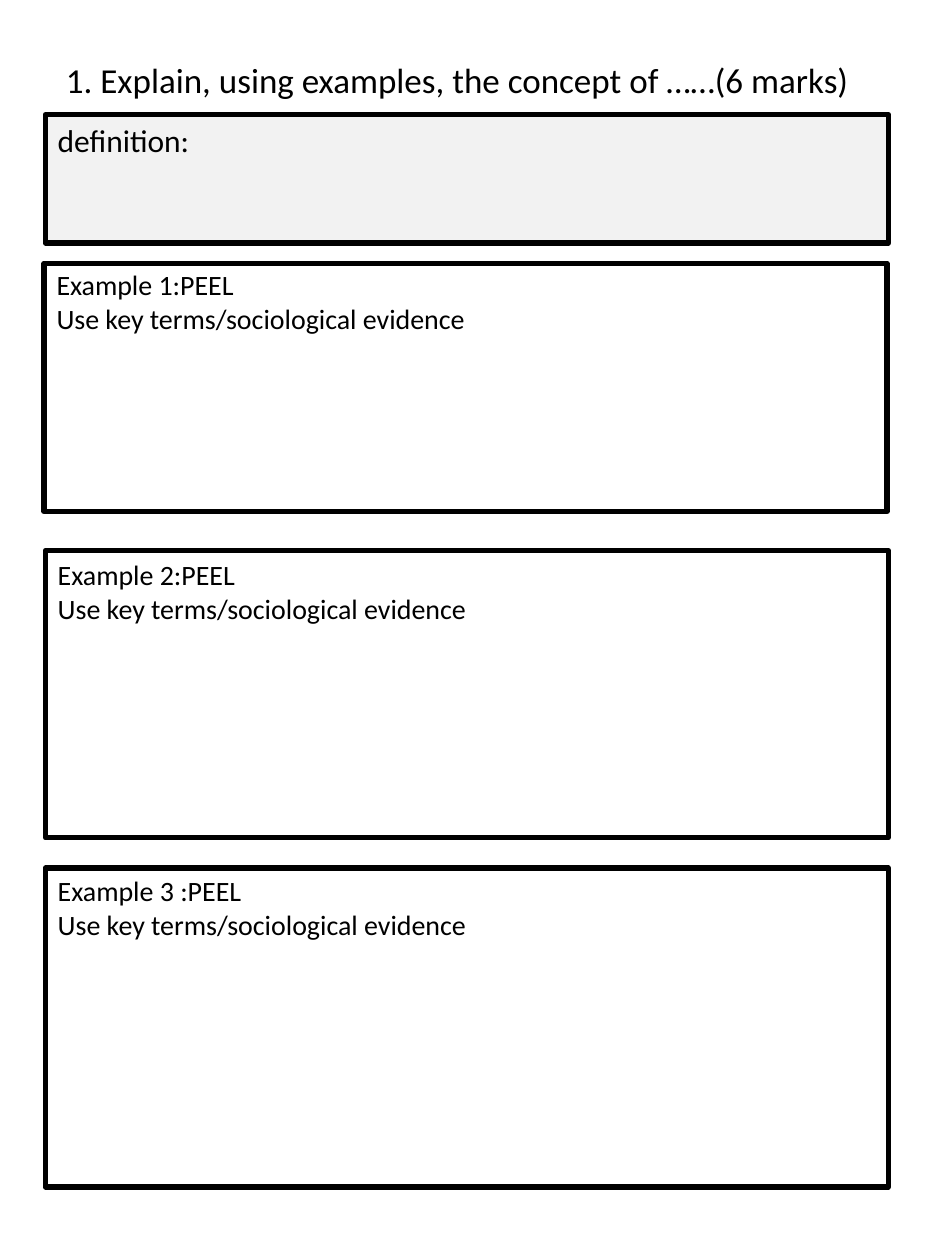
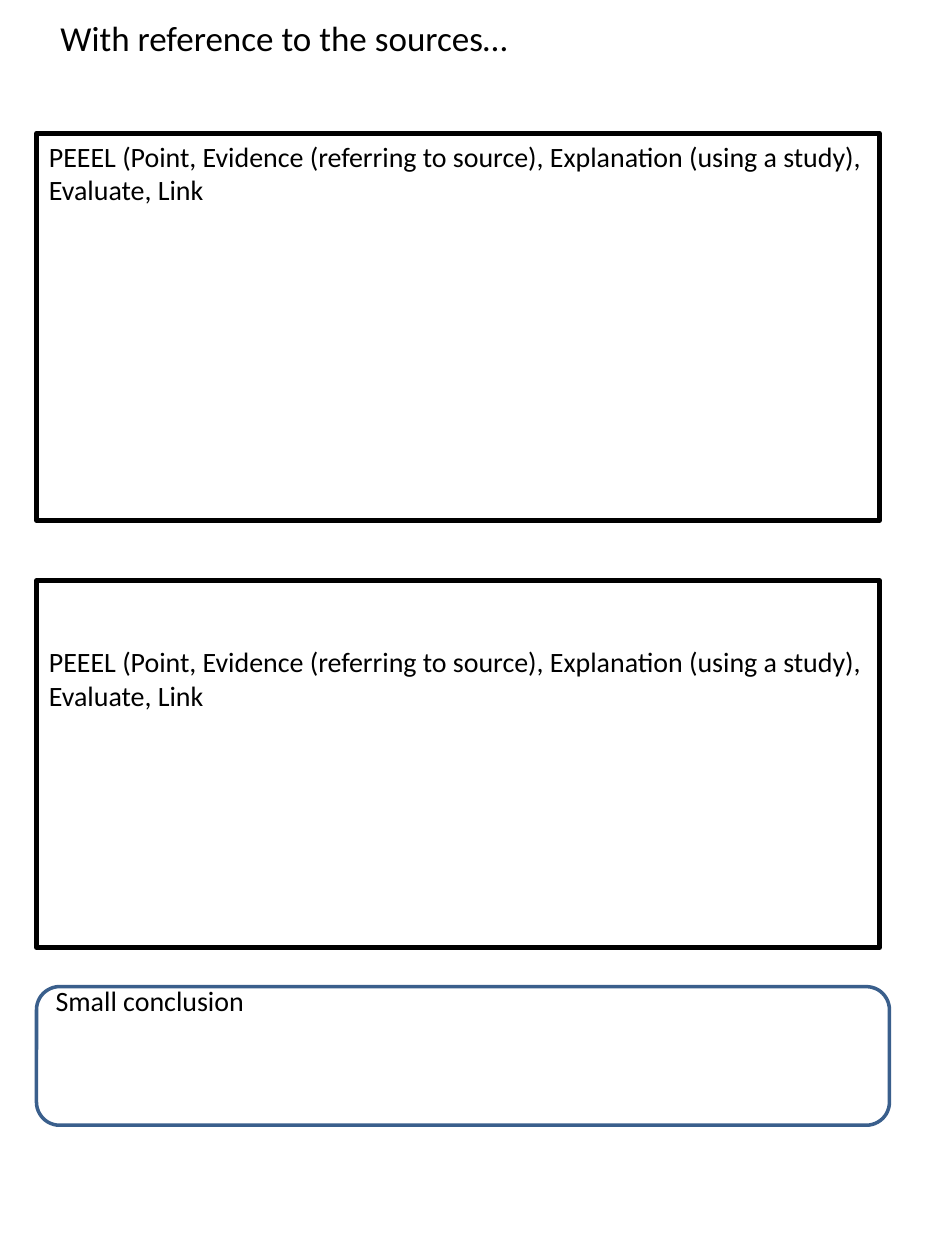
"""Build two exam answer frames as portrait slides."""
from dataclasses import dataclass
from pptx import Presentation
from pptx.dml.color import RGBColor
from pptx.enum.shapes import MSO_SHAPE
from pptx.enum.text import MSO_ANCHOR, PP_ALIGN
from pptx.util import Pt


@dataclass(frozen=True)
class Theme:
    font: str = "Calibri"
    ink: str = "000000"
    paper: str = "FFFFFF"
    grey: str = "F2F2F2"
    blue: str = "3A5F8C"
    title: int = 20
    lead: int = 18
    body: int = 16
    edge: int = 3
    thin: int = 2


theme = Theme()


def write(shape, lines, size, anchor=MSO_ANCHOR.TOP, top=3.6, low=3.6, align=PP_ALIGN.LEFT):
    frame = shape.text_frame
    frame.word_wrap = True
    frame.vertical_anchor = anchor
    frame.margin_top, frame.margin_bottom = Pt(top), Pt(low)
    for i, line in enumerate(lines):
        para = frame.paragraphs[0] if i == 0 else frame.add_paragraph()
        para.alignment = align
        run = para.add_run()
        run.text = line
        run.font.name = theme.font
        run.font.size = Pt(size)
        run.font.color.rgb = RGBColor.from_string(theme.ink)


def panel(slide, kind, place, fill, line, width):
    shape = slide.shapes.add_shape(kind, *map(Pt, place))
    shape.shadow.inherit = False
    shape.fill.solid()
    shape.fill.fore_color.rgb = RGBColor.from_string(fill)
    shape.line.color.rgb = RGBColor.from_string(line)
    shape.line.width = Pt(width)
    return shape


deck = Presentation()
deck.slide_width, deck.slide_height = Pt(540), Pt(720)
blank = deck.slide_layouts[6]

hint = "Use key terms/sociological evidence"
peel = "PEEEL (Point, Evidence (referring to source), Explanation (using a study), Evaluate, Link"
wide = 481.7

pages = [
    (
        ("1. Explain, using examples, the concept of ……(6 marks)", 9.4, 504, 3.6, PP_ALIGN.CENTER),
        [
            (25.9, 65.5, 73.4, theme.grey, ["definition:"], theme.lead, 3.6),
            (25.2, 150.5, 141.8, theme.paper, ["Example 1:PEEL", hint], theme.body, 2.6),
            (25.9, 314.6, 164.2, theme.paper, ["Example 2:PEEL", hint], theme.body, 4),
            (25.9, 496.1, 182.2, theme.paper, ["Example 3 :PEEL", hint], theme.body, 3.2),
        ],
    ),
    (
        ("With reference to the sources…", 27.4, 486, 52.4, PP_ALIGN.LEFT),
        [
            (20.9, 76.3, 221, theme.paper, [peel], theme.body, 3.2),
            (20.9, 331.9, 209.5, theme.paper, [peel], theme.body, 36.4),
        ],
    ),
]

for (title, left, width, low, align), boxes in pages:
    slide = deck.slides.add_slide(blank)
    head = slide.shapes.add_textbox(Pt(left), Pt(-14.4), Pt(width), Pt(120.2))
    write(head, [title], theme.title, MSO_ANCHOR.MIDDLE, low=low, align=align)
    for left, top, height, fill, lines, size, inset in boxes:
        place = (left, top, wide, height)
        box = panel(slide, MSO_SHAPE.RECTANGLE, place, fill, theme.ink, theme.edge)
        write(box, lines, size, top=inset)

place = (20.9, 563.8, 487.4, 79.2)
close = panel(slide, MSO_SHAPE.ROUNDED_RECTANGLE, place, theme.paper, theme.blue, theme.thin)
write(close, ["Small conclusion"], theme.body, MSO_ANCHOR.MIDDLE, top=0, low=63.4)

deck.save("out.pptx")
